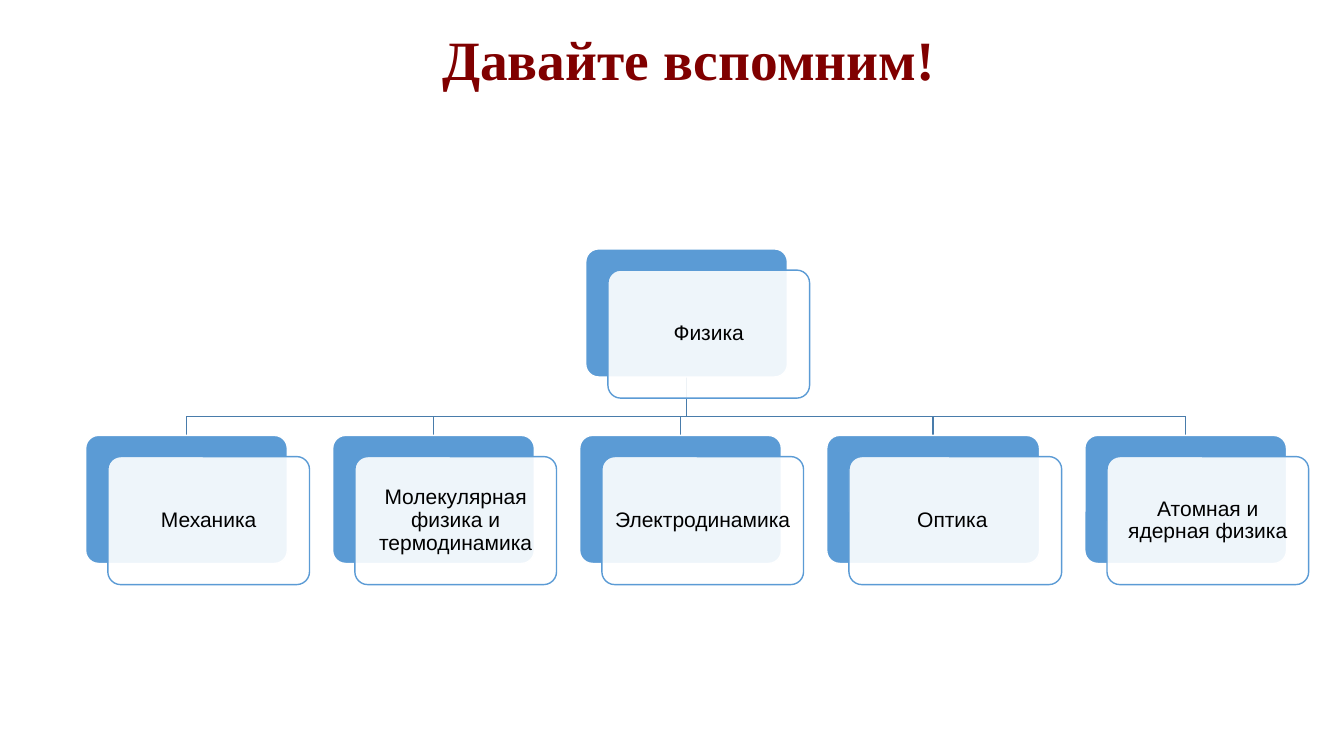
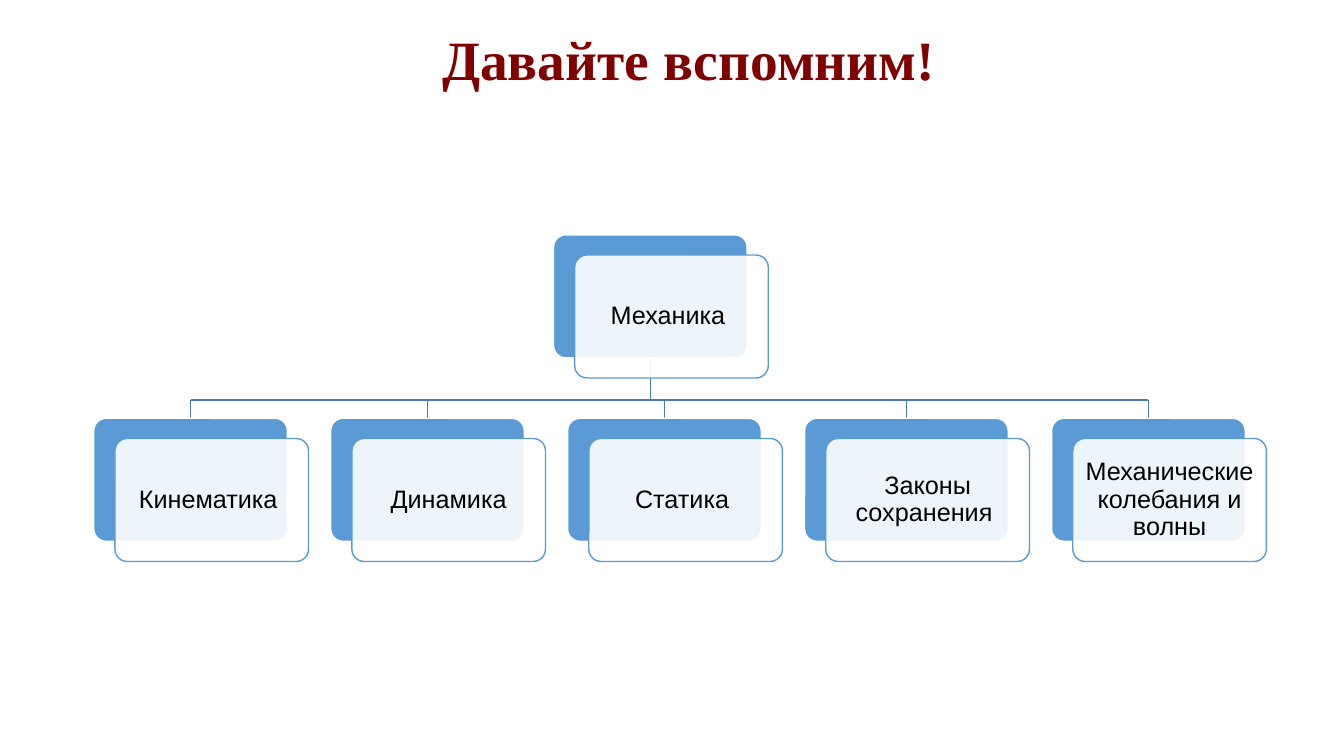
from pptx import Presentation
from pptx.dml.color import RGBColor
from pptx.enum.shapes import MSO_CONNECTOR, MSO_SHAPE
from pptx.enum.text import MSO_ANCHOR, MSO_AUTO_SIZE, PP_ALIGN
from pptx.oxml.ns import qn
from pptx.util import Inches, Pt
from lxml.etree import SubElement

# Shared look
BLUE, WHITE, BLACK, WIRE, RED = "5B9BD5", "FFFFFF", "000000", "497CAB", "800000"
HEAD = {"name": "Times New Roman", "size": Pt(39.6), "bold": True}
PARA = {"alignment": PP_ALIGN.CENTER, "line_spacing": 0.9}
HEAD_BOX = {"left": Inches(3.17), "top": Inches(0.27),
            "width": Inches(7.32), "height": Inches(0.71)}

# Each tree: sizes in inches, root and leaf texts; extra widens one leaf
TREES = [
    {"root": "Физика", "root_at": (5.81, 2.47), "row_at": (0.85, 4.32),
     "size": (2.0, 1.27), "gap": 0.45, "shift": (0.22, 0.21),
     "rail": 4.13, "font": 15, "pad": 0.06, "extra": {3: 0.11},
     "leaves": ["Механика", "Молекулярная физика и термодинамика",
                "Электродинамика", "Оптика ", "Атомная и ядерная физика"]},
    {"root": "Механика ", "root_at": (5.49, 2.33), "row_at": (0.93, 4.15),
     "size": (1.92, 1.22), "gap": 0.43, "shift": (0.21, 0.2),
     "rail": 3.97, "font": 18, "pad": 0.07, "extra": {3: 0.1},
     "leaves": ["Кинематика ", "Динамика", "Статика ",
                "Законы сохранения ", "Механические колебания и волны"]},
]


def rgb(code):
    return RGBColor.from_string(code)


def apply(item, values):
    for key, value in values.items():
        setattr(item, key, value)


def write(frame, text, font, color):
    frame.text = text
    para = frame.paragraphs[0]
    apply(para, PARA)
    face = para.runs[0].font
    apply(face, font)
    face.color.rgb = rgb(color)


def add_head(slide, text):
    title = slide.shapes.title
    apply(title, HEAD_BOX)
    apply(title.text_frame, {"vertical_anchor": MSO_ANCHOR.MIDDLE,
                             "auto_size": MSO_AUTO_SIZE.NONE})
    write(title.text_frame, text, HEAD, RED)


def add_line(slide, x1, y1, x2, y2):
    line = slide.shapes.add_connector(
        MSO_CONNECTOR.STRAIGHT, *map(Inches, (x1, y1, x2, y2)))
    line.line.width = Pt(1)
    line.line.color.rgb = rgb(WIRE)
    SubElement(line._element.spPr, qn("a:effectLst"))


def add_card(slide, x, y, w, h, fill, edge):
    card = slide.shapes.add_shape(
        MSO_SHAPE.ROUNDED_RECTANGLE, *map(Inches, (x, y, w, h)))
    card.adjustments[0] = 0.1
    card.shadow.inherit = False
    card.fill.solid()
    card.fill.fore_color.rgb = rgb(fill)
    card.line.color.rgb = rgb(edge)
    card.line.width = Pt(1)
    return card


def add_node(slide, tree, text, x, y, w):
    """Blue card with a sheer white card, holding the text, in front."""
    h = tree["size"][1]
    dx, dy = tree["shift"]
    add_card(slide, x, y, w, h, BLUE, WHITE)
    front = add_card(slide, x + dx, y + dy, w, h, WHITE, BLUE)
    tint = front.fill._xPr.find(qn("a:solidFill"))[0]
    SubElement(tint, qn("a:alpha")).set("val", "90000")
    frame = front.text_frame
    apply(frame, {"word_wrap": True, "vertical_anchor": MSO_ANCHOR.MIDDLE})
    apply(frame, {f"margin_{side}": Inches(tree["pad"])
                  for side in ("left", "right", "top", "bottom")})
    write(frame, text, {"name": "Arial", "size": Pt(tree["font"])}, BLACK)


def add_tree(slide, tree):
    w, h = tree["size"]
    root_x, root_y = tree["root_at"]
    x, row_y = tree["row_at"]
    rail = tree["rail"]

    # Place the leaves from left to right
    spots = []
    for i, text in enumerate(tree["leaves"]):
        wide = w + tree["extra"].get(i, 0)
        spots.append((text, x, row_y, wide))
        x += wide + tree["gap"]

    # Lines lie behind the cards
    mids = [left + wide / 2 for _, left, _, wide in spots]
    stem = root_x + w / 2
    add_line(slide, stem, root_y + h, stem, rail)
    add_line(slide, mids[0], rail, mids[-1], rail)
    for mid in mids:
        add_line(slide, mid, rail, mid, row_y)

    # Cards
    for spot in [(tree["root"], root_x, root_y, w)] + spots:
        add_node(slide, tree, *spot)


def main():
    deck = Presentation()
    apply(deck, {"slide_width": Inches(13.33), "slide_height": Inches(7.5)})
    for tree in TREES:
        slide = deck.slides.add_slide(deck.slide_layouts[5])
        add_head(slide, "Давайте вспомним!")
        add_tree(slide, tree)
    deck.save("out.pptx")


if __name__ == "__main__":
    main()
